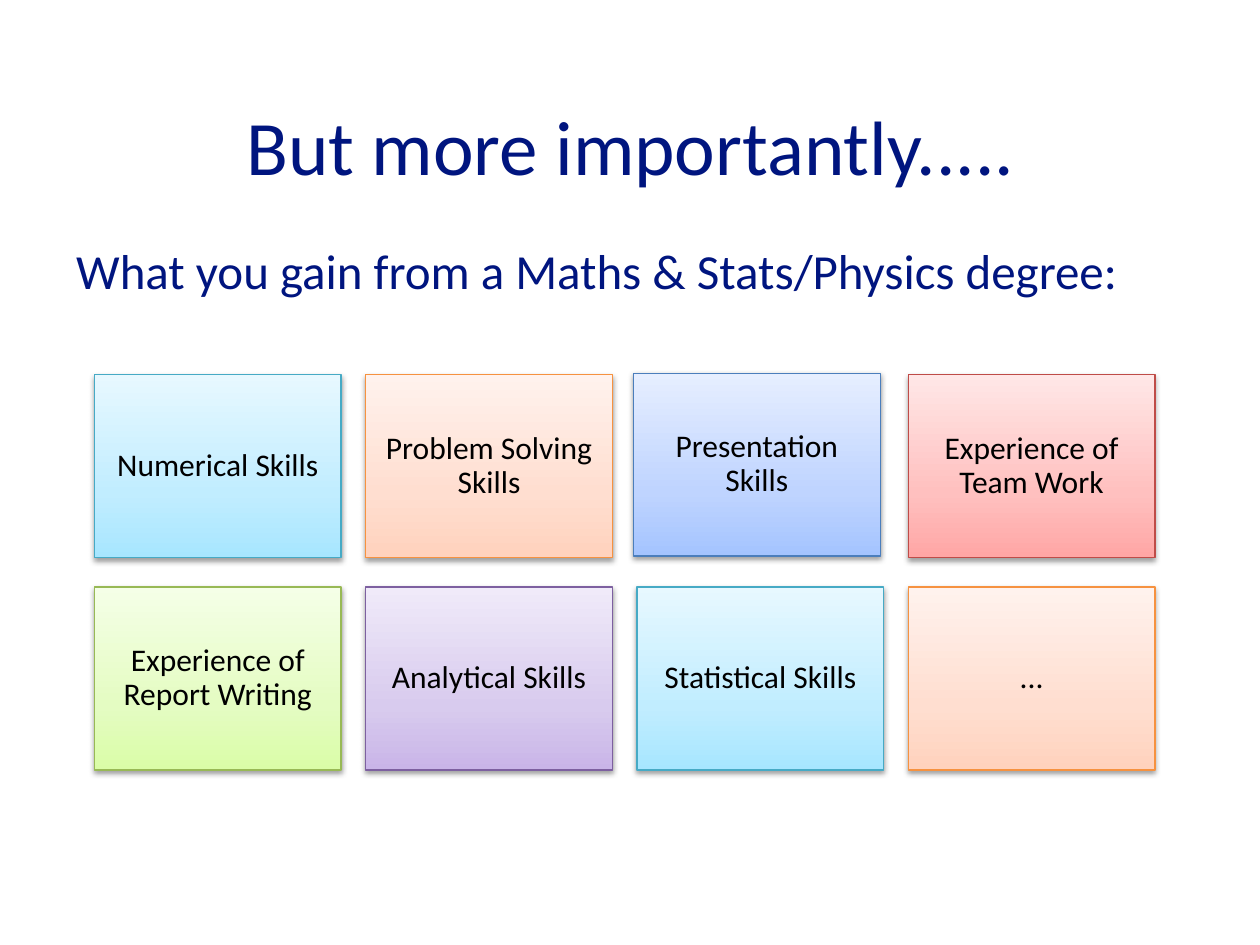
from copy import deepcopy

from lxml import etree
from pptx import Presentation
from pptx.dml.color import RGBColor
from pptx.enum import shapes, text
from pptx.oxml.ns import qn
from pptx.util import Pt

NAVY = RGBColor(0x00, 0x15, 0x7F)
BLACK = RGBColor(0, 0, 0)


def shades(*codes):
    return [RGBColor.from_string(code) for code in codes]


# Line colour, then the gradient from bottom to top
AQUA = shades("46AAC5", "A7E6FF", "C1EDFF", "E7F8FF")
ORANGE = shades("F69240", "FFD2BD", "FFDED0", "FFF2ED")
BLUE = shades("4B7EBC", "A4C4FF", "BFD4FF", "E6EEFF")
RED = shades("BF4C48", "FFA6A5", "FFC0BF", "FFE7E7")
GREEN = shades("98B955", "DAFDA7", "E4FCC2", "F5FFE7")
PURPLE = shades("7D60A0", "C9B5E8", "D8CBEE", "F0EAF9")

SKILLS = [
    ("Numerical Skills", AQUA),
    ("Problem Solving Skills", ORANGE),
    ("Presentation Skills", BLUE),
    ("Experience of Team Work", RED),
    ("Experience of Report Writing", GREEN),
    ("Analytical Skills", PURPLE),
    ("Statistical Skills", AQUA),
    ("...", ORANGE),
]
STOPS = (0, 0.35, 1)
COLS = 4
LEFT, TOP = 54, 214
WIDE, HIGH = 141, 104.5
STEP_X, STEP_Y = 155, 121.5
NUDGE = {2: (-2, -0.7)}  # the third card sits slightly off the grid


def write(shape, words, size, color, align, anchor, inset=None):
    frame = shape.text_frame
    looks = {"word_wrap": True, "vertical_anchor": anchor}
    if inset is not None:
        for side in ("left", "right", "top", "bottom"):
            looks["margin_" + side] = Pt(inset)
    for name, value in looks.items():
        setattr(frame, name, value)
    para = frame.paragraphs[0]
    para.text = words
    para.alignment = align
    for name, value in {"name": "Calibri", "size": Pt(size), "bold": False}.items():
        setattr(para.runs[0].font, name, value)
    para.runs[0].font.color.rgb = color
    return para


deck = Presentation()
deck.slide_width, deck.slide_height = Pt(720), Pt(540)
slide = deck.slides.add_slide(deck.slide_layouts[5])

title = slide.shapes.title
place = {"left": 36.5, "top": 37.5, "width": 648, "height": 90}
for name, value in place.items():
    setattr(title, name, Pt(value))
write(title, "But more importantly.....", 44, NAVY,
      text.PP_ALIGN.CENTER, text.MSO_ANCHOR.MIDDLE)

intro = slide.shapes.add_textbox(Pt(36.5), Pt(134), Pt(648), Pt(356))
write(intro, "What you gain from a Maths & Stats/Physics degree:", 28, NAVY,
      text.PP_ALIGN.LEFT, text.MSO_ANCHOR.TOP)

for i, (words, (edge, *tones)) in enumerate(SKILLS):
    row, col = divmod(i, COLS)
    dx, dy = NUDGE.get(i, (0, 0))
    card = slide.shapes.add_shape(
        shapes.MSO_SHAPE.RECTANGLE,
        Pt(LEFT + col * STEP_X + dx), Pt(TOP + row * STEP_Y + dy),
        Pt(WIDE), Pt(HIGH))

    card.fill.gradient()
    card.fill.gradient_angle = 90
    props = card._element.spPr
    stops = props.find(".//" + qn("a:gsLst"))
    stops.insert(1, deepcopy(stops[0]))
    for stop, pos, tone in zip(card.fill.gradient_stops, STOPS, tones):
        stop.position = pos
        stop.color.rgb = tone
    card.line.color.rgb = edge
    card.line.width = Pt(0.75)

    card.shadow.inherit = False
    effects = props.find(qn("a:effectLst"))
    shadow = etree.SubElement(
        effects, qn("a:outerShdw"), blurRad=str(Pt(3.1)), dist=str(Pt(1.6)),
        dir="5400000", rotWithShape="0")
    black = etree.SubElement(shadow, qn("a:srgbClr"), val=str(BLACK))
    etree.SubElement(black, qn("a:alpha"), val="38000")

    para = write(card, words, 18, BLACK,
                 text.PP_ALIGN.CENTER, text.MSO_ANCHOR.MIDDLE, 5)
    para.line_spacing = 0.9

deck.save("out.pptx")
